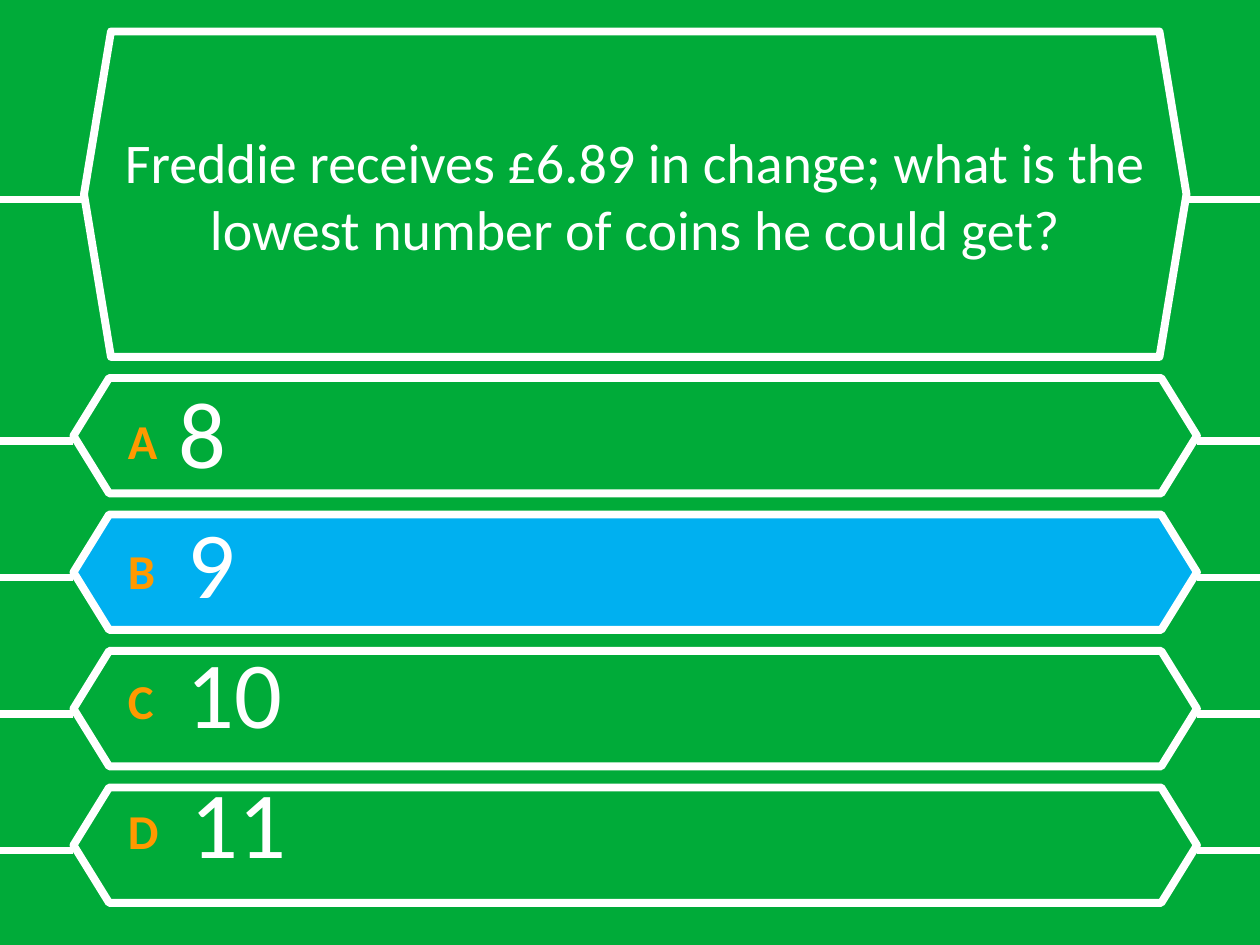
from lxml import etree
from pptx import Presentation
from pptx.dml.color import RGBColor
from pptx.enum.shapes import MSO_CONNECTOR, MSO_SHAPE
from pptx.enum.text import MSO_ANCHOR, PP_ALIGN
from pptx.oxml.ns import qn
from pptx.util import Pt

PX = 7620  # EMU; 120 px to the inch
WIDE, HIGH = 1200, 900
HEX = MSO_SHAPE.HEXAGON
LINE = MSO_CONNECTOR.STRAIGHT
MIDDLE = MSO_ANCHOR.MIDDLE
CENTER = PP_ALIGN.CENTER

GREEN, BLUE, WHITE, ORANGE = "00AB39", "00B0F0", "FFFFFF", "FF9900"
QUESTION = ("Freddie receives £6.89 in change; "
            "what is the lowest number of coins he could get?")
# letter, answer, fill, indent of the answer
ANSWERS = [("A", "8", None, 48), ("B", "9", BLUE, 57),
           ("C", "10", None, 56), ("D", "11", None, 60)]
TOP, STEP = 360, 130


def color(code):
    return RGBColor.from_string(code)


def emu(*sizes):
    return [size * PX for size in sizes]


class Board:
    font = "Calibri"
    stroke = Pt(4.5)

    def __init__(self, slide):
        self.slide = slide
        fill = slide.background.fill
        fill.solid()
        fill.fore_color.rgb = color(GREEN)

    def pen(self, item):
        item.line.color.rgb = color(WHITE)
        item.line.width = self.stroke

    def frame(self, x, y, w, h, slant, fill=None):
        box = self.slide.shapes.add_shape(HEX, *emu(x, y, w, h))
        box.shadow.inherit = False
        box.adjustments[0] = slant
        if fill:
            box.fill.solid()
            box.fill.fore_color.rgb = color(fill)
        else:
            box.fill.background()
        self.pen(box)

    def wires(self, left, right, y):
        """Join both sides of a frame to the slide edges."""
        for start, end in ((left, 0), (WIDE, right)):
            wire = self.slide.shapes.add_connector(
                LINE, *emu(start, y, end, y))
            self.pen(wire)
            etree.SubElement(wire._element.spPr, qn("a:effectLst"))

    def text(self, x, y, w, h):
        box = self.slide.shapes.add_textbox(*emu(x, y, w, h))
        box.text_frame.word_wrap = True
        return box.text_frame

    def style(self, font, size, code, bold=False):
        font.name = self.font
        font.size = Pt(size)
        font.bold = bold
        font.color.rgb = color(code)

    def title(self, x, y, w, h, words):
        frame = self.text(x, y, w, h)
        frame.vertical_anchor = MIDDLE
        para = frame.paragraphs[0]
        para.text = words
        para.alignment = CENTER
        self.style(para.font, 32, WHITE)

    def choices(self, x, y, w, h, rows):
        frame = self.text(x, y, w, h)
        for i, (letter, answer, _, indent) in enumerate(rows):
            para = frame.add_paragraph() if i else frame.paragraphs[0]
            para.space_before = Pt(9.5)
            props = para._p.get_or_add_pPr()
            props.set("marL", str(indent * PX))
            props.set("indent", str(-indent * PX))
            mark = para.add_run()
            mark.text = letter
            self.style(mark.font, 48, ORANGE, True)
            mark._r.get_or_add_rPr().set("baseline", "10000")
            value = para.add_run()
            value.text = "\t" + answer
            self.style(value.font, 54, WHITE)


def main():
    deck = Presentation()
    deck.slide_width, deck.slide_height = emu(WIDE, HIGH)
    board = Board(deck.slides.add_slide(deck.slide_layouts[6]))

    board.frame(80, 30, 1050, 310, 0.083)
    board.wires(80, 1130, 190)
    for i, (_, _, fill, _) in enumerate(ANSWERS):
        y = TOP + i * STEP
        board.frame(70, y, 1070, 110, 0.309, fill)
        board.wires(70, 1140, y + 60)
    board.choices(110, 350, 1000, 520, ANSWERS)
    board.title(100, 50, 1010, 270, QUESTION)
    deck.save("out.pptx")


if __name__ == "__main__":
    main()
